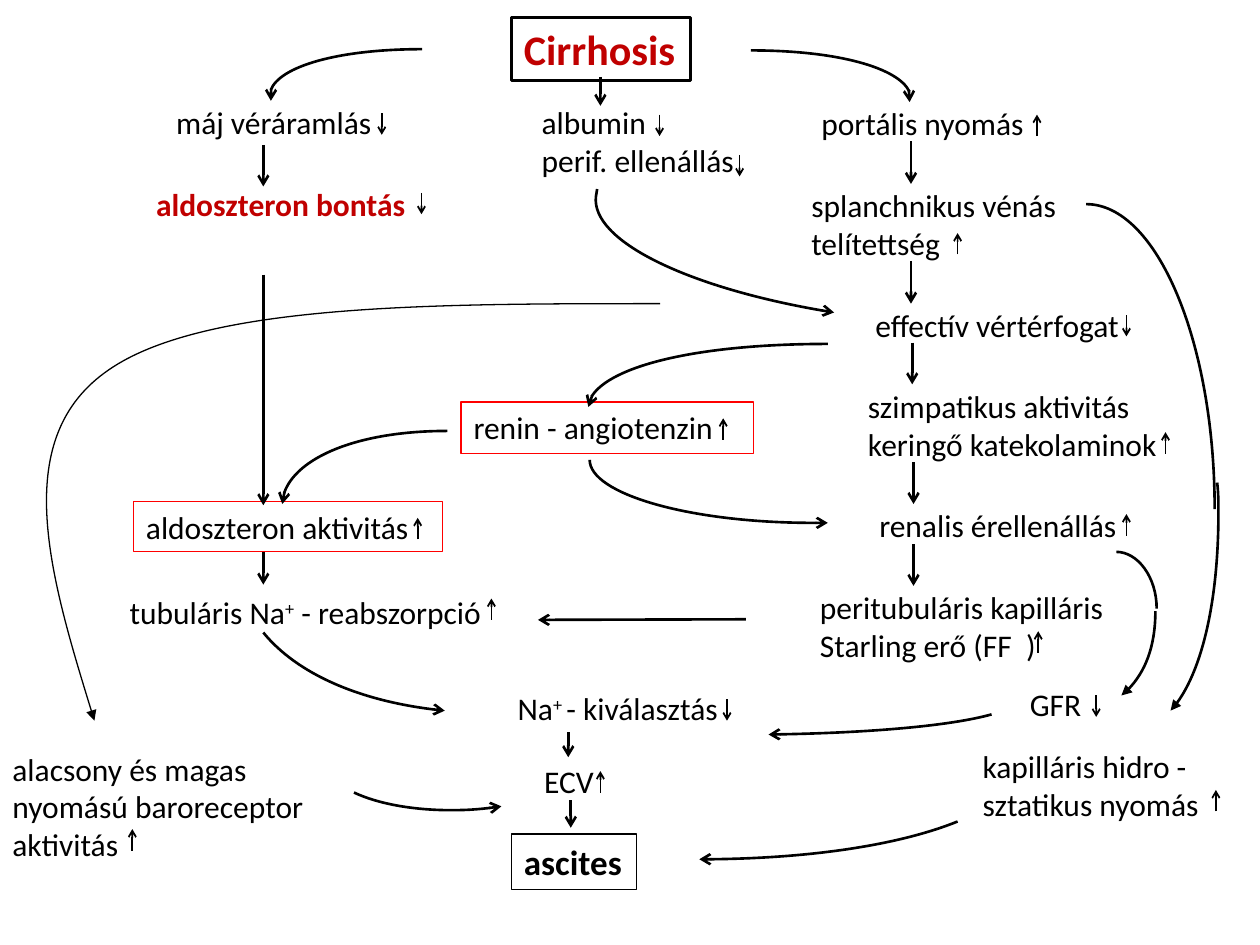
from lxml.etree import SubElement
from pptx import Presentation
from pptx.dml.color import RGBColor
from pptx.enum.shapes import MSO_CONNECTOR, MSO_SHAPE
from pptx.enum.text import MSO_ANCHOR, MSO_AUTO_SIZE, PP_ALIGN
from pptx.oxml.ns import qn
from pptx.util import Inches, Pt

COLORS = {"ink": "000000", "accent": "C00000", "frame": "FF0000"}

deck = Presentation()
deck.slide_width, deck.slide_height = Inches(10), Inches(7.5)
page = deck.slides.add_slide(deck.slide_layouts[6])
CELL = deck.slide_width // 100  # square grid, 100 columns by 75 rows


def grid(*cells):
    return [round(cell * CELL) for cell in cells]


def style_line(shape, width, tip=None, tip_size="med"):
    """Colour the line, drop the shadow and put an arrowhead at its end."""
    shape.line.color.rgb = RGBColor.from_string(COLORS["ink"])
    shape.line.width = Pt(width)
    properties = shape._element.spPr
    if tip:
        SubElement(properties.find(qn("a:ln")), qn("a:tailEnd"),
                   type=tip, w=tip_size, len=tip_size)
    SubElement(properties, qn("a:effectLst"))


# Labels: left, top, width, height, wraps, paragraphs ("^" marks a superscript run)
labels = [
    (13, 7.7, 17.7, 4, False, [["máj véráramlás"]]),
    (64.2, 7.8, 24.4, 4, True, [["portális nyomás"]]),
    (42, 7.7, 20.5, 7, True, [["albumin"], ["perif. ellenállás"]]),
    (11.4, 14.2, 24.5, 4, True, [["aldoszteron bontás"]]),
    (63.4, 14.3, 25.2, 7, True, [["splanchnikus vénás"], ["telítettség"]]),
    (68.5, 23.8, 21.6, 4, False, [["effectív vértérfogat"]]),
    (67.9, 30.2, 25.1, 7.1, False, [["szimpatikus aktivitás"], ["keringő katekolaminok"]]),
    (68.8, 39.7, 21.1, 4, False, [["renalis érellenállás"]]),
    (64.1, 46.2, 24.7, 7.1, False,
     [["peritubuláris kapilláris"], ["Starling erő (FF", " ", ")"]]),
    (80.7, 53.9, 6.1, 4, False, [["GFR"]]),
    (77, 58.8, 21.9, 7, True, [["kapilláris hidro -"], ["sztatikus nyomás"]]),
    (9.3, 46.6, 30.3, 4, False, [["tubuláris Na", "^+", " - reabszorpció"]]),
    (0, 59, 29.5, 10, True, [["alacsony és magas"], ["nyomású baroreceptor aktivitás"]]),
    (40.1, 54.2, 18.2, 4, False, [["Na", "^+ ", "- kiválasztás"]]),
    (42.2, 60, 6, 4, False, [["ECV"]]),
    (40.6, 1.4, 14.2, 5, False, [["Cirrhosis"]]),
    (10.6, 39.8, 24.5, 4, True, [["aldoszteron aktivitás"]]),
    (36.6, 31.9, 23.2, 4.1, True, [["renin - angiotenzin"]]),
    (40.6, 66.2, 9.9, 4.4, False, [["ascites"]]),
]
frames = {  # line colour and width
    "Cirrhosis": ("ink", 2),
    "aldoszteron aktivitás": ("frame", 0.75),
    "renin - angiotenzin": ("frame", 0.75),
    "ascites": ("ink", 0.75),
}
strong = {  # text size and colour
    "Cirrhosis": (24, "accent"),
    "aldoszteron bontás": (18, "accent"),
    "ascites": (20, "ink"),
}

for left, top, width, height, wraps, paragraphs in labels:
    name = paragraphs[0][0]
    place = grid(left, top, width, height)
    if name in frames:
        frame_color, frame_width = frames[name]
        box = page.shapes.add_shape(MSO_SHAPE.RECTANGLE, *place)
        box.shadow.inherit = False
        box.fill.background()
        box.line.color.rgb = RGBColor.from_string(COLORS[frame_color])
        box.line.width = Pt(frame_width)
    else:
        box = page.shapes.add_textbox(*place)
    frame = box.text_frame
    frame.word_wrap = wraps
    frame.auto_size = MSO_AUTO_SIZE.SHAPE_TO_FIT_TEXT
    frame.vertical_anchor = MSO_ANCHOR.TOP
    size, color = strong.get(name, (18, "ink"))
    for index, runs in enumerate(paragraphs):
        para = frame.add_paragraph() if index else frame.paragraphs[0]
        para.alignment = PP_ALIGN.RIGHT if name == "GFR" else PP_ALIGN.LEFT
        for text in runs:
            span = para.add_run()
            span.text = text.lstrip("^")
            span.font.name = "Calibri"
            span.font.size = Pt(size)
            span.font.bold = name in strong
            span.font.color.rgb = RGBColor.from_string(COLORS[color])
            if text.startswith("^"):
                span.font._element.set("baseline", "30000")
            elif text == " ":  # widened to leave room for the mark
                span.font._element.set("spc", "400")

# Straight arrows from one step to the next: x, top, bottom
steps = [
    (47.65, 6.1, 8.4), (20.9, 11.5, 14.8), (20.9, 21.8, 40.1), (20.9, 43.8, 46.4),
    (72.3, 11.2, 14.6), (72.3, 20.7, 24.1), (72.4, 27.2, 30.5), (72.5, 36.7, 40),
    (72.5, 43.2, 46.5), (45.1, 58.1, 60.1), (45.3, 63.5, 65.7),
]
# Small marks beside the labels for a fall or a rise: x, top
MARK = 1.7
falls = [(52.35, 9.1), (58.7, 12.3), (30.3, 9), (33.45, 15.3), (89.4, 25),
         (57.7, 55.5), (87, 55.2)]
rises = [(82.3, 9.1), (76, 18.5), (92.5, 34.3), (89.4, 40.8), (33.15, 41.1),
         (39, 47.5), (47.65, 61.2), (10.5, 65.8), (96.5, 62.7), (57.4, 33.2), (82.4, 50.1)]

arrows = [(x, top, x, bottom, 1.5, "med") for x, top, bottom in steps]
arrows += [(x, top, x, top + MARK, 1, "sm") for x, top in falls]
arrows += [(x, top + MARK, x, top, 1, "sm") for x, top in rises]
arrows.append((59.2, 49.15, 42.7, 49.2, 1.5, "med"))
for *ends, width, tip_size in arrows:
    arrow = page.shapes.add_connector(MSO_CONNECTOR.STRAIGHT, *grid(*ends))
    style_line(arrow, width, "arrow", tip_size)

# Curved arrows: line width, arrowhead, chained cubic Bezier control points
curves = [
    (1.5, "arrow", [(33.5, 3.9), (26.8, 3.9), (21.4, 5.5), (21.4, 7.6),
                    (21.4, 7.8), (21.5, 7.9), (21.5, 8)]),
    (1.5, "arrow", [(59.6, 4), (66.6, 4), (72.3, 5.7), (72.3, 7.8),
                    (72.3, 7.9), (72.3, 8), (72.2, 8.1)]),
    (1.5, "arrow", [(47.4, 15), (47.4, 15.2), (47.3, 15.4), (47.3, 15.6),
                    (46.9, 19.1), (54.9, 23), (66.2, 24.8)]),
    (1.5, "arrow", [(65.7, 27.3), (55.2, 27.3), (46.7, 29.5), (46.7, 32.3)]),
    (1.5, "arrow", [(46.8, 36.5), (46.8, 39.2), (54.7, 41.5), (64.5, 41.5),
                    (64.9, 41.5), (65.3, 41.5), (65.7, 41.5)]),
    (1.5, "arrow", [(35.5, 34.2), (28.3, 34.2), (22.4, 36.8), (22.4, 40)]),
    (1.5, None, [(88.6, 43.8), (90.3, 43.8), (91.8, 45.8), (91.8, 48.3)]),
    (1.5, "triangle", [(91.7, 48.5), (91.7, 51.4), (90.6, 54), (89, 55.2)]),
    (1.5, "arrow", [(78.7, 56.7), (75.5, 57.6), (68.7, 58.2), (61, 58.3)]),
    (1.5, None, [(86.2, 16.2), (91.8, 16.2), (96.4, 27.1), (96.4, 40.4)]),
    (1.5, "triangle", [(96.6, 38.3), (96.7, 39.1), (96.7, 39.9), (96.7, 40.7),
                       (96.7, 47.7), (95.2, 54), (92.9, 56.4)]),
    (1.5, "arrow", [(76, 65.2), (71.3, 67.1), (63.7, 68.2), (55.5, 68.2)]),
    (1.5, "arrow", [(28.1, 62.9), (30, 63.8), (32.8, 64.3), (35.8, 64.3),
                    (37.1, 64.3), (38.5, 64.2), (39.8, 64)]),
    (1.5, "arrow", [(20.9, 50.2), (23.6, 53.5), (29, 55.8), (35.3, 56.4)]),
    (0.75, "triangle", [(52.4, 24.1), (34, 24.1), (15.7, 24.1), (8.3, 29.6),
                        (0.8, 35.1), (4.1, 46.2), (7.5, 57.2)]),
]
for width, tip, controls in curves:
    start, *others = [grid(*control) for control in controls]
    outline = page.shapes.build_freeform(*start)
    outline.add_line_segments(others, close=False)
    curve = outline.convert_to_shape()
    # Turn every three line segments into one Bezier segment
    segments = list(curve._element.iter(qn("a:lnTo")))
    track = segments[0].getparent()
    for first in range(0, len(segments), 3):
        bend = SubElement(track, qn("a:cubicBezTo"))
        for segment in segments[first:first + 3]:
            bend.append(segment[0])
            track.remove(segment)
    curve.fill.background()
    style_line(curve, width, tip)

deck.save("out.pptx")
